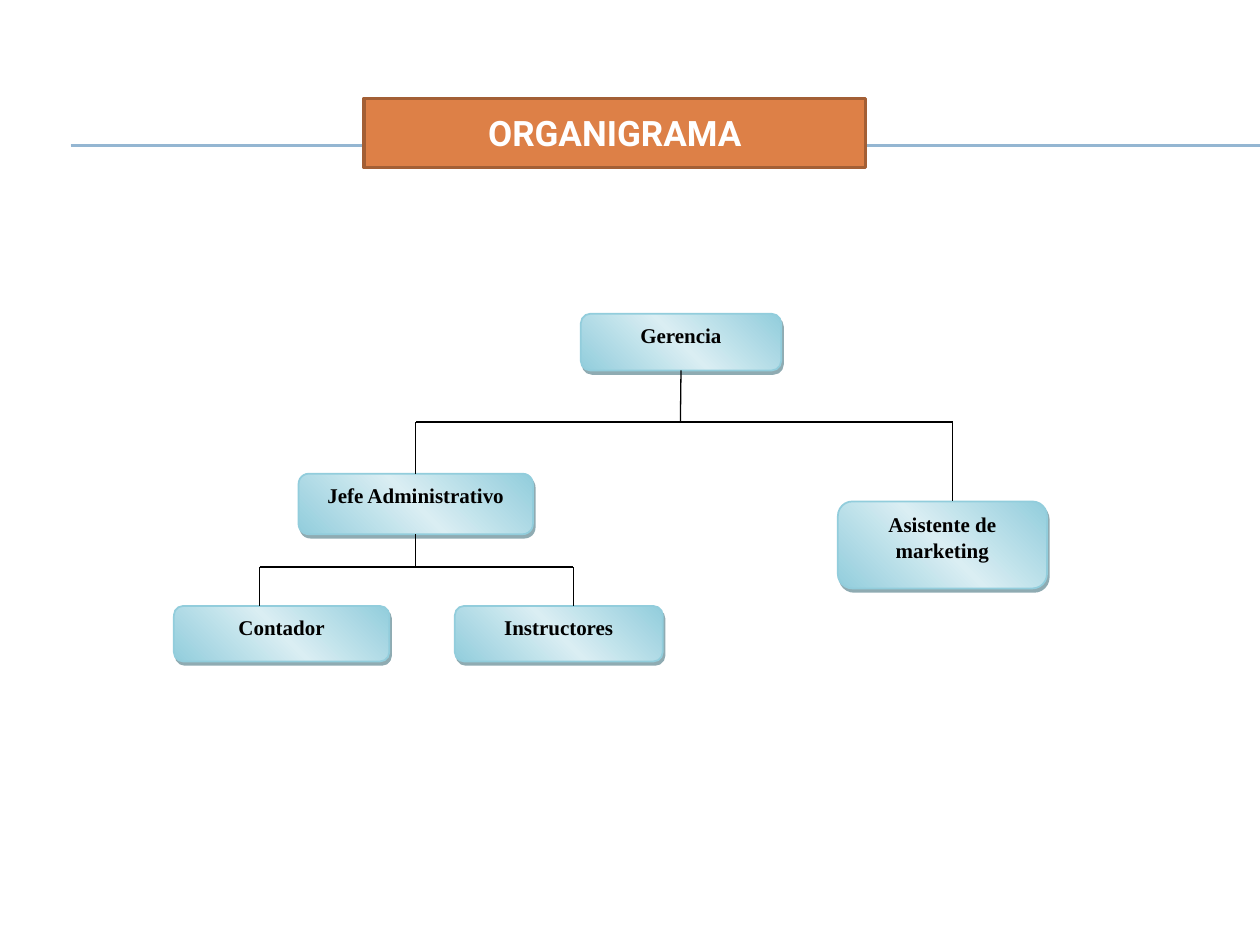
"""Builds an organisation chart slide with a title band and five linked posts."""
from pptx import Presentation
from pptx.dml.color import RGBColor
from pptx.enum.shapes import MSO_CONNECTOR as Connector, MSO_SHAPE as Shape
from pptx.enum.text import MSO_ANCHOR as Anchor, PP_ALIGN as Align
from pptx.oxml import parse_xml
from pptx.oxml.ns import nsdecls
from pptx.util import Inches, Pt

WHITE = RGBColor(0xFF, 0xFF, 0xFF)
BLACK = RGBColor(0, 0, 0)
ORANGE = RGBColor(0xDD, 0x80, 0x47)
BROWN = RGBColor(0xA3, 0x5F, 0x35)
RULE_BLUE = RGBColor(0x94, 0xB6, 0xD2)
AQUA = RGBColor(0x92, 0xCD, 0xDC)
PALE_AQUA = RGBColor(0xDA, 0xEE, 0xF3)
DEEP_TEAL = RGBColor(0x20, 0x58, 0x67)


def write(frame, text, *, font, size, color, anchor):
    frame.word_wrap = True
    frame.vertical_anchor = anchor
    paragraph = frame.paragraphs[0]
    paragraph.alignment = Align.CENTER
    run = paragraph.add_run()
    run.text = text
    run.font.name = font
    run.font.size = Pt(size)
    run.font.bold = True
    run.font.color.rgb = color


class OrgChart:
    def __init__(self, slide):
        self.shapes = slide.shapes
        self.title_font = "Roboto"
        self.post_font = "Times New Roman"

    def outlined(self, preset, box, color, width):
        shape = self.shapes.add_shape(preset, *map(Inches, box))
        shape.line.color.rgb = color
        shape.line.width = Pt(width)
        shape.shadow.inherit = False
        return shape

    def banner(self, text, box):
        band = self.outlined(Shape.RECTANGLE, box, BROWN, 2)
        band.fill.solid()
        band.fill.fore_color.rgb = ORANGE
        write(band.text_frame, text, font=self.title_font, size=20,
              color=WHITE, anchor=Anchor.MIDDLE)

    def post(self, text, box):
        card = self.outlined(Shape.ROUNDED_RECTANGLE, box, AQUA, 1)
        card.adjustments[0] = 0.167
        stops = "".join(
            f'<a:gs pos="{pos}"><a:srgbClr val="{color}"/></a:gs>'
            for pos, color in ((0, AQUA), (50000, PALE_AQUA), (100000, AQUA)))
        properties = card._element.spPr
        properties.insert(2, parse_xml(
            f'<a:gradFill {nsdecls("a")} rotWithShape="1"><a:gsLst>{stops}</a:gsLst>'
            '<a:lin ang="18900000" scaled="1"/></a:gradFill>'))
        properties[-1].append(parse_xml(
            f'<a:outerShdw {nsdecls("a")} blurRad="0" dist="{Pt(2.2)}" dir="3780000" '
            f'algn="ctr" rotWithShape="0"><a:srgbClr val="{DEEP_TEAL}">'
            '<a:alpha val="50000"/></a:srgbClr></a:outerShdw>'))
        write(card.text_frame, text, font=self.post_font, size=12,
              color=BLACK, anchor=Anchor.TOP)
        return card

    def line(self, start, end, color=BLACK):
        link = self.shapes.add_connector(
            Connector.STRAIGHT, *map(Inches, (*start, *end)))
        link.line.color.rgb = color
        link.line.width = Pt(0.75)
        link._element.spPr.append(parse_xml(f'<a:effectLst {nsdecls("a")}/>'))
        return link


def main():
    deck = Presentation()
    deck.slide_width, deck.slide_height = Inches(10), Inches(7.5)
    chart = OrgChart(deck.slides.add_slide(deck.slide_layouts[6]))

    for y in (1.15, 1.16):
        chart.line((0.56, y), (10, y), RULE_BLUE)
    chart.banner("ORGANIGRAMA", (2.89, 0.78, 3.98, 0.55))

    management = chart.post("Gerencia", (4.61, 2.49, 1.59, 0.45))
    administration = chart.post("Jefe Administrativo", (2.37, 3.76, 1.86, 0.48))
    chart.post("Asistente de marketing", (6.65, 3.98, 1.66, 0.69))
    chart.post("Contador", (1.38, 4.81, 1.71, 0.44))
    chart.post("Instructores", (3.61, 4.81, 1.65, 0.44))

    management_x, administration_x, marketing_x = 5.4, 3.3, 7.56
    accountant_x, instructors_x = 2.06, 4.55
    upper_y, lower_y = 3.35, 4.5
    chart.line((administration_x, upper_y), (marketing_x, upper_y))
    chart.line((accountant_x, lower_y), (instructors_x, lower_y))
    chart.line((management_x, 2.94), (management_x, upper_y)).begin_connect(management, 2)
    chart.line((administration_x, upper_y), (administration_x, 3.76)).end_connect(administration, 0)
    chart.line((administration_x, 4.24), (administration_x, lower_y)).begin_connect(administration, 2)
    chart.line((marketing_x, upper_y), (marketing_x, 3.98))
    for x in (accountant_x, instructors_x):
        chart.line((x, lower_y), (x, 4.81))

    deck.save("out.pptx")


if __name__ == "__main__":
    main()
